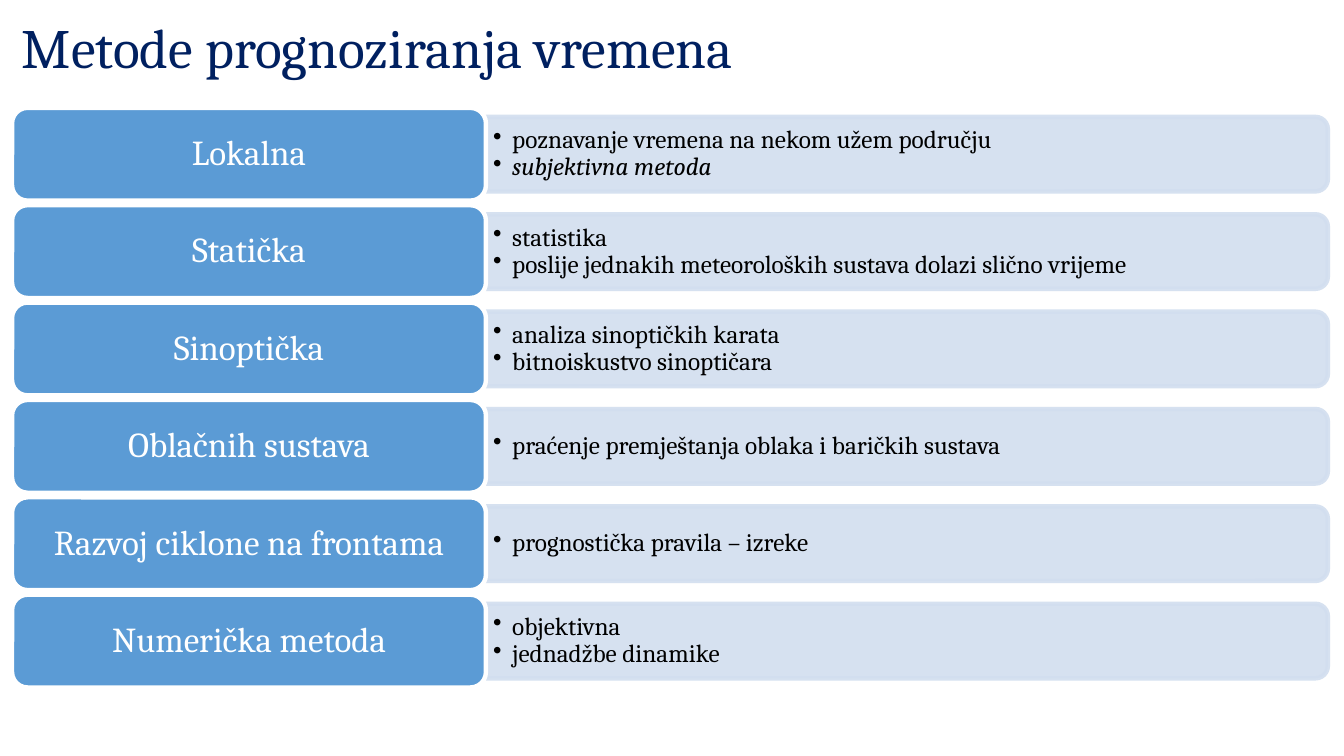
from lxml import etree
from pptx import Presentation
from pptx.dml.color import RGBColor
from pptx.enum.shapes import MSO_SHAPE
from pptx.enum.text import MSO_ANCHOR, PP_ALIGN
from pptx.oxml.ns import qn
from pptx.util import Inches, Pt

ROUNDED = MSO_SHAPE.ROUNDED_RECTANGLE
ROUNDED_TOP = MSO_SHAPE.ROUND_2_SAME_RECTANGLE
MIDDLE = MSO_ANCHOR.MIDDLE
LEFT = PP_ALIGN.LEFT
CENTER = PP_ALIGN.CENTER

NAVY = RGBColor(0x00, 0x20, 0x60)
BLUE = RGBColor(0x5B, 0x9B, 0xD5)
PALE_BLUE = RGBColor(0xD2, 0xDE, 0xEF)
WHITE = RGBColor(0xFF, 0xFF, 0xFF)
BLACK = RGBColor(0x00, 0x00, 0x00)

FONT = "Cambria"
ROW_HEIGHT = 0.92
ROW_PITCH = ROW_HEIGHT * 1.05
LABEL_WIDTH = 4.7
PANEL_HEIGHT = 0.74

METHODS = [
    ("Lokalna", [("poznavanje vremena na nekom užem području", False),
                 ("subjektivna metoda", True)]),
    ("Statička", [("statistika", False),
                  ("poslije jednakih meteoroloških sustava dolazi slično vrijeme", False)]),
    ("Sinoptička", [("analiza sinoptičkih karata", False),
                    ("bitnoiskustvo sinoptičara", False)]),
    ("Oblačnih sustava", [("praćenje premještanja oblaka i baričkih sustava", False)]),
    ("Razvoj ciklone na frontama", [("prognostička pravila – izreke", False)]),
    ("Numerička metoda", [("objektivna", False), ("jednadžbe dinamike", False)]),
]


def prepare_frame(shape, side, edge):
    frame = shape.text_frame
    frame.word_wrap = True
    frame.vertical_anchor = MIDDLE
    frame.margin_left = frame.margin_right = Inches(side)
    frame.margin_top = frame.margin_bottom = Inches(edge)
    return frame


def write(para, text, size, color, align=LEFT, italic=False):
    para.alignment = align
    para.line_spacing = 0.9
    span = para.add_run()
    span.text = text
    span.font.name = FONT
    span.font.size = Pt(size)
    span.font.color.rgb = color
    span.font.italic = italic


def add_bullet(para):
    props = para._p.get_or_add_pPr()
    props.set("marL", str(Inches(0.19)))
    props.set("indent", str(-Inches(0.19)))
    etree.SubElement(props, qn("a:buChar")).set("char", "•")


def paint(shape, fill, line):
    shape.shadow.inherit = False
    shape.fill.solid()
    shape.fill.fore_color.rgb = fill
    shape.line.color.rgb = line
    shape.line.width = Pt(3.15)


def add_title(page, left, top, width, height):
    box = page.shapes.add_textbox(Inches(left), Inches(top), Inches(width), Inches(height))
    frame = prepare_frame(box, 0.1, 0.05)
    write(frame.paragraphs[0], "Metode prognoziranja vremena", 39.6, NAVY)


def add_panel(page, left, top, width, height, points):
    center_x, center_y = left + width / 2, top + height / 2
    panel = page.shapes.add_shape(
        ROUNDED_TOP, Inches(center_x - height / 2), Inches(center_y - width / 2),
        Inches(height), Inches(width))
    panel.rotation = 90
    paint(panel, PALE_BLUE, PALE_BLUE)
    for color in panel._element.spPr.iter(qn("a:srgbClr")):
        etree.SubElement(color, qn("a:alpha")).set("val", "90000")

    box = page.shapes.add_textbox(
        Inches(left), Inches(top + 0.04), Inches(width - 0.04), Inches(height - 0.08))
    frame = prepare_frame(box, 0.07, 0.04)
    for index, (text, italic) in enumerate(points):
        para = frame.add_paragraph() if index else frame.paragraphs[0]
        add_bullet(para)
        write(para, text, 18, BLACK, italic=italic)


def add_label(page, left, top, width, height, text):
    label = page.shapes.add_shape(
        ROUNDED, Inches(left), Inches(top), Inches(width), Inches(height))
    paint(label, BLUE, WHITE)
    frame = prepare_frame(label, 0.1, 0.05)
    write(frame.paragraphs[0], text, 25, WHITE, CENTER)


def add_methods(page, left, top, width):
    for index, (name, points) in enumerate(METHODS):
        row_top = top + index * ROW_PITCH
        add_panel(page, left + LABEL_WIDTH, row_top + (ROW_HEIGHT - PANEL_HEIGHT) / 2,
                  width - LABEL_WIDTH, PANEL_HEIGHT, points)
        add_label(page, left, row_top, LABEL_WIDTH, ROW_HEIGHT, name)


def main():
    deck = Presentation()
    deck.slide_width = Inches(13.33)
    deck.slide_height = Inches(7.5)
    page = deck.slides.add_slide(deck.slide_layouts[6])
    add_title(page, 0.12, 0.15, 13.04, 0.71)
    add_methods(page, 0.12, 1.07, 13.05)
    deck.save("out.pptx")


if __name__ == "__main__":
    main()
